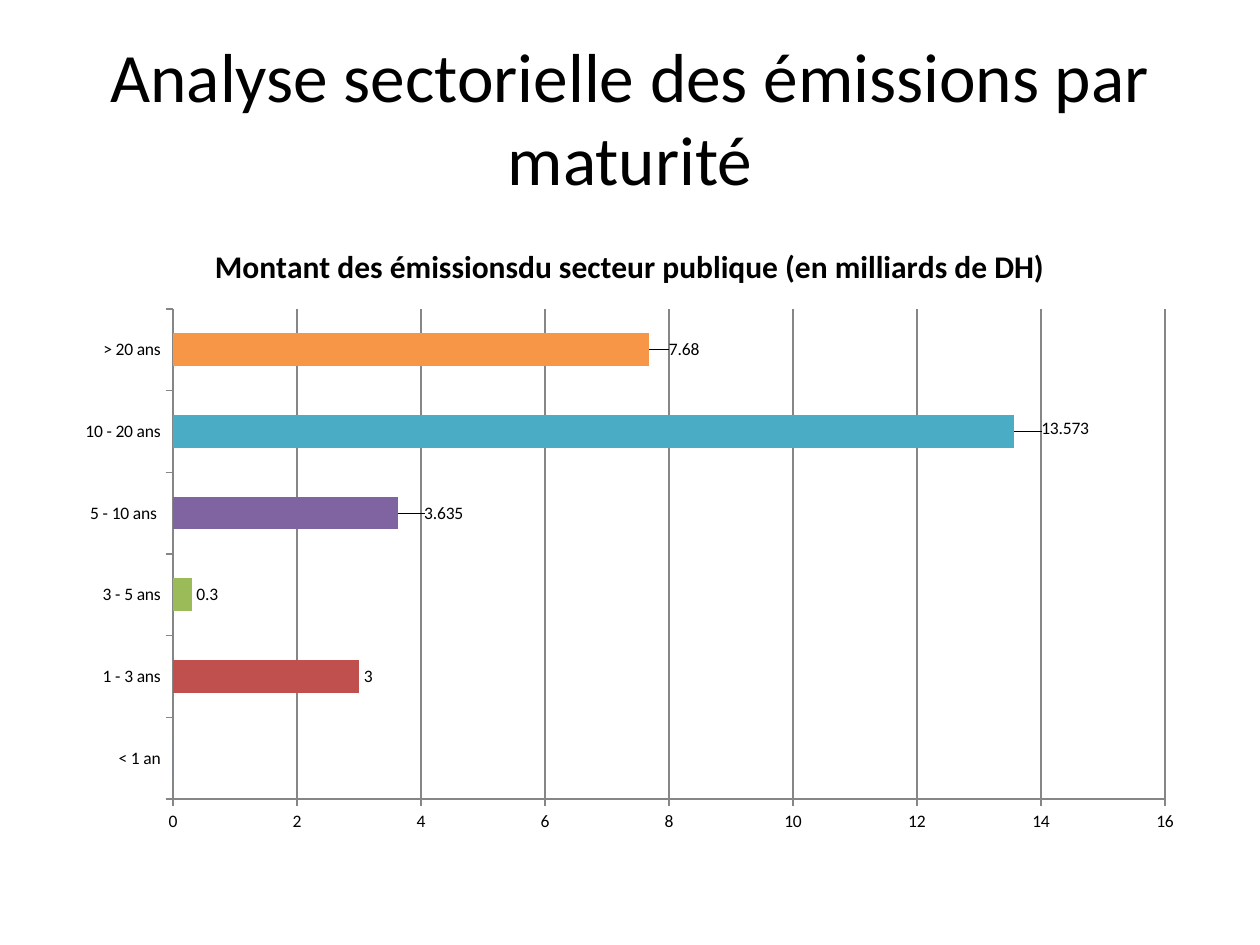
from lxml.etree import SubElement
from pptx import Presentation
from pptx.chart.data import CategoryChartData
from pptx.dml.color import RGBColor
from pptx.enum.chart import XL_CHART_TYPE as Kind, XL_LABEL_POSITION as Pos, XL_TICK_MARK as Tick
from pptx.enum.text import MSO_ANCHOR, PP_ALIGN
from pptx.oxml.ns import qn
from pptx.util import Emu, Pt

PX = 914400 // 126
FONT = "Calibri"
BLACK = RGBColor(0x00, 0x00, 0x00)
GREY = RGBColor(0x86, 0x86, 0x86)

TITLE = "Analyse sectorielle des émissions par maturité"
HEAD = "Montant des émissionsdu secteur publique (en milliards de DH)"
# maturity, amount, bar colour
BARS = [
    ("< 1 an", 0, RGBColor(0x4F, 0x81, 0xBD)),
    ("1 - 3 ans", 3, RGBColor(0xC0, 0x50, 0x4D)),
    ("3 - 5 ans", 0.3, RGBColor(0x9B, 0xBB, 0x59)),
    ("5 - 10 ans ", 3.635, RGBColor(0x80, 0x64, 0xA2)),
    ("10 - 20 ans", 13.573, RGBColor(0x4B, 0xAC, 0xC6)),
    ("> 20 ans", 7.68, RGBColor(0xF7, 0x96, 0x46)),
]
SHIFTS = {3: (21, 0), 4: (22, -3), 5: (15, 0)}  # label moves, in px
TITLE_BOX = (63, 38, 1134, 157)
CHART_BOX = (63, 220, 1134, 624)
PLOT_BOX = (110, 89, 992, 490)  # within the chart


def box(*lengths):
    return [Emu(n * PX) for n in lengths]


def style(font, size, bold=False):
    font.name, font.size, font.bold = FONT, Pt(size), bold
    font.color.rgb = BLACK


def lay_out(node, **values):
    """Fill a c:layout element with a manual layout."""
    manual = SubElement(node, qn("c:manualLayout"))
    for tag, val in values.items():
        SubElement(manual, qn("c:" + tag)).set("val", str(val))


def add_title(slide):
    title = slide.shapes.title
    title.left, title.top, title.width, title.height = box(*TITLE_BOX)
    title.text_frame.text = TITLE
    title.text_frame.vertical_anchor = MSO_ANCHOR.MIDDLE
    para = title.text_frame.paragraphs[0]
    para.alignment = PP_ALIGN.CENTER
    style(para.font, 39.6)


def style_axes(chart):
    for axis in (chart.category_axis, chart.value_axis):
        axis.major_tick_mark = Tick.OUTSIDE
        axis.minor_tick_mark = Tick.NONE
        axis.format.line.color.rgb = GREY
        style(axis.tick_labels.font, 10)
    chart.category_axis.has_major_gridlines = False
    value = chart.value_axis
    value.minimum_scale, value.maximum_scale, value.major_unit = 0, 16, 2
    value.has_major_gridlines = True
    value.major_gridlines.format.line.color.rgb = GREY


def style_bars(plot):
    plot.vary_by_categories = True
    plot.gap_width = 150
    bars = plot.series[0]
    bars.invert_if_negative = False
    labels = bars.data_labels
    labels.show_value = True
    labels.position = Pos.OUTSIDE_END
    style(labels.font, 10)
    for i, (_, amount, color) in enumerate(BARS):
        point = bars.points[i]
        point.format.fill.solid()
        point.format.fill.fore_color.rgb = color
        if amount and i not in SHIFTS:
            continue
        label = point.data_label
        style(label.font, 10)
        label.position = Pos.OUTSIDE_END
    _, _, wide, high = CHART_BOX
    for node in labels._element.findall(qn("c:dLbl")):
        idx = node.find(qn("c:idx"))
        i = int(idx.get("val"))
        if i in SHIFTS:
            dx, dy = SHIFTS[i]
            layout = SubElement(node, qn("c:layout"))
            idx.addnext(layout)
            lay_out(layout, x=round(dx / wide, 4), y=round(dy / high, 4))
        else:
            for child in list(node)[1:]:
                node.remove(child)
            SubElement(node, qn("c:delete")).set("val", "1")


def place_plot(chart):
    area = chart._chartSpace.chart.plotArea
    layout = area.find(qn("c:layout"))
    if layout is None:
        layout = SubElement(area, qn("c:layout"))
        area.insert(0, layout)
    x, y, w, h = PLOT_BOX
    _, _, wide, high = CHART_BOX
    lay_out(layout, layoutTarget="inner", xMode="edge", yMode="edge",
            x=round(x / wide, 4), y=round(y / high, 4),
            w=round(w / wide, 4), h=round(h / high, 4))


def add_chart(slide):
    data = CategoryChartData()
    data.categories = [name for name, _, _ in BARS]
    data.add_series("Series 1", [amount for _, amount, _ in BARS])
    chart = slide.shapes.add_chart(Kind.BAR_CLUSTERED, *box(*CHART_BOX), data).chart
    style(chart.font, 10)
    chart.has_legend = False
    chart.has_title = True
    chart.chart_title.include_in_layout = False
    chart.chart_title.text_frame.text = HEAD
    style(chart.chart_title.text_frame.paragraphs[0].font, 18, bold=True)
    style_axes(chart)
    style_bars(chart.plots[0])
    place_plot(chart)


def main():
    deck = Presentation()
    deck.slide_width, deck.slide_height = box(1260, 945)
    slide = deck.slides.add_slide(deck.slide_layouts[5])
    add_title(slide)
    add_chart(slide)
    deck.save("out.pptx")


if __name__ == "__main__":
    main()
